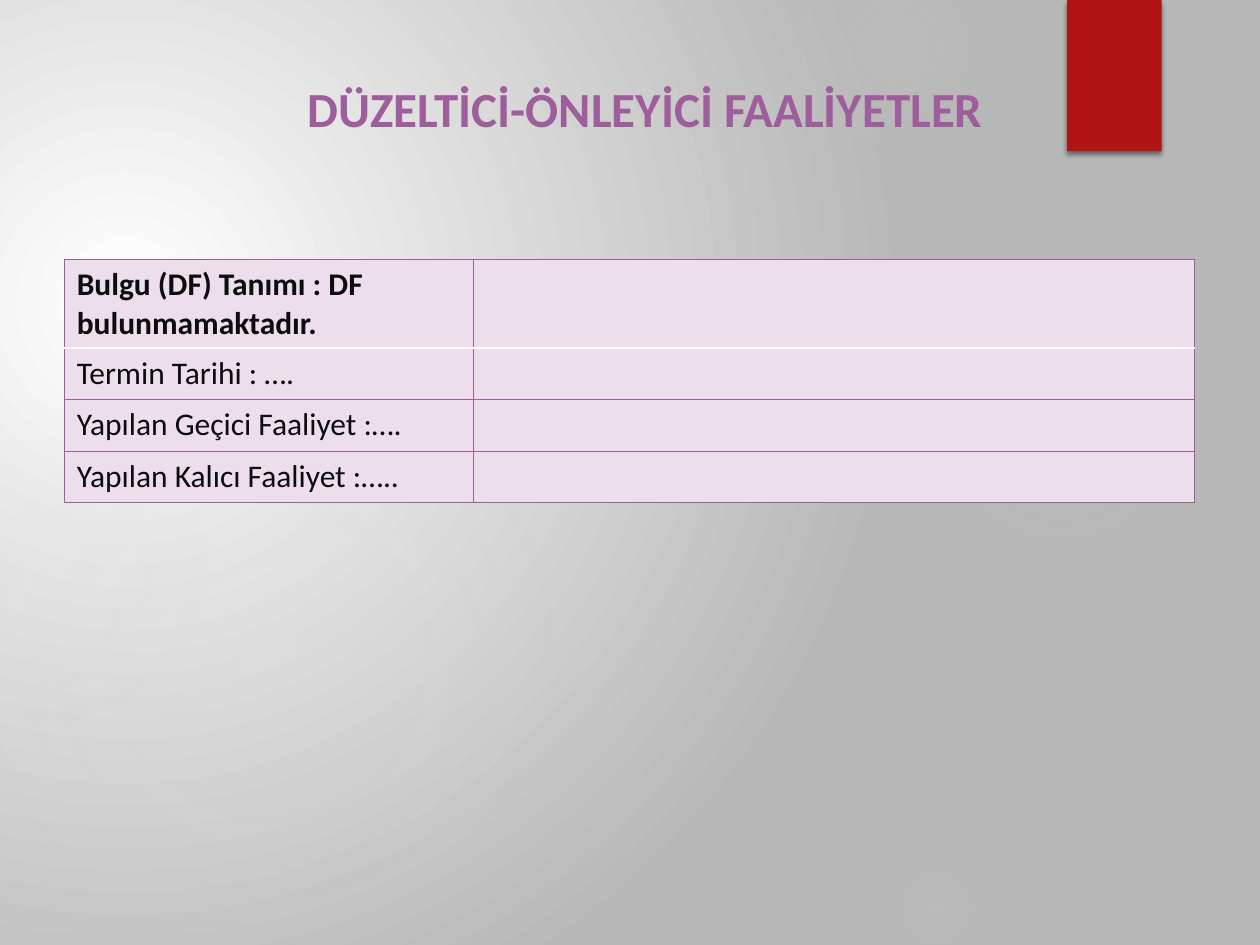
from lxml import etree
from pptx import Presentation
from pptx import util as u
from pptx.dml.color import RGBColor
from pptx.enum import shapes, text
from pptx.oxml import ns

PURPLE, LILAC, INK, RED, WHITE = "9E5E9B", "ECDFEB", "0C0D0D", "B01513", "FFFFFF"


def color(value):
    return RGBColor.from_string(value)


def add_node(parent, tag, **attributes):
    node = etree.SubElement(parent, ns.qn(tag))
    for key, value in attributes.items():
        node.set(key, str(value))
    return node


def add_color(parent, value, alpha=100):
    node = add_node(parent, "a:srgbClr", val=value)
    if alpha < 100:
        add_node(node, "a:alpha", val=alpha * 1000)


def radial_fill(stops, focus):
    """Circular gradient; stops are (position, colour, alpha), all in percent."""
    fill = etree.Element(ns.qn("a:gradFill"), rotWithShape="1")
    stop_list = add_node(fill, "a:gsLst")
    for position, value, alpha in stops:
        add_color(add_node(stop_list, "a:gs", pos=position * 1000), value, alpha)
    circle = add_node(fill, "a:path", path="circle")
    sides = {side: share * 1000 for side, share in zip("ltrb", focus)}
    add_node(circle, "a:fillToRect", **sides)
    return fill


class SlideBuilder:
    font = "Calibri"

    def __init__(self, slide):
        self.slide = slide

    def background(self, stops, focus):
        self.slide.background.fill.solid()
        properties = self.slide.element.find(".//" + ns.qn("p:bgPr"))
        properties.replace(properties[0], radial_fill(stops, focus))

    def shape(self, kind, *box):
        shape = self.slide.shapes.add_shape(kind, *map(u.Inches, box))
        shape.line.fill.background()
        shape.shadow.inherit = False
        return shape

    def glow(self, left, top, size, inner, middle, edge):
        circle = self.shape(shapes.MSO_SHAPE.OVAL, left, top, size, size)
        circle.fill.background()
        properties = circle.element.spPr
        stops = [(0, "D9D9D9", inner), (36, "D9D9D9", middle), (edge, "D9D9D9", 0)]
        properties.replace(properties.find(ns.qn("a:noFill")), radial_fill(stops, [50] * 4))

    def ribbon(self, fill, *box):
        ribbon = self.shape(shapes.MSO_SHAPE.RECTANGLE, *box)
        ribbon.fill.solid()
        ribbon.fill.fore_color.rgb = color(fill)
        effects = ribbon.element.spPr.find(ns.qn("a:effectLst"))
        shadow = add_node(effects, "a:outerShdw", blurRad=u.Pt(3), dist=u.Pt(2),
                          dir=90 * 60000, rotWithShape=0)
        add_color(shadow, "000000", 45)

    def style(self, paragraph, size, ink, bold):
        font = paragraph.font
        font.name, font.size, font.bold = self.font, u.Pt(size), bold
        font.color.rgb = color(ink)

    def title(self, wording, *box):
        frame = self.slide.shapes.add_textbox(*map(u.Inches, box)).text_frame
        frame.word_wrap = True
        frame.vertical_anchor = text.MSO_ANCHOR.MIDDLE
        paragraph = frame.paragraphs[0]
        paragraph.text = wording
        paragraph.alignment = text.PP_ALIGN.CENTER
        paragraph.line_spacing = 0.9
        paragraph.space_after = u.Pt(6)
        self.style(paragraph, 28, PURPLE, True)

    def border(self, cell, side, value, width):
        line = add_node(cell._tc.get_or_add_tcPr(), "a:ln" + side, w=u.Pt(width))
        add_color(add_node(line, "a:solidFill"), value)

    def table(self, labels, left, top, widths, heights):
        box = map(u.Inches, (left, top, sum(widths), sum(heights)))
        table = self.slide.shapes.add_table(len(labels), len(widths), *box).table
        for column, width in zip(table.columns, widths):
            column.width = u.Inches(width)
        for index, (label, height) in enumerate(zip(labels, heights)):
            table.rows[index].height = u.Inches(height)
            table.cell(index, 0).text = label
            for cell in table.rows[index].cells:
                self.style(cell.text_frame.paragraphs[0], 18, INK, index == 0)
                # A white rule parts the header from the rows below
                white_side = {0: "B", 1: "T"}.get(index)
                for side in "LRTB":
                    rule = (WHITE, 1.5) if side == white_side else (PURPLE, 0.75)
                    self.border(cell, side, *rule)
                cell.fill.solid()
                cell.fill.fore_color.rgb = color(LILAC)


def main():
    deck = Presentation()
    deck.slide_width, deck.slide_height = u.Inches(10), u.Inches(7.5)
    builder = SlideBuilder(deck.slides.add_slide(deck.slide_layouts[6]))

    # Backdrop with soft glows
    builder.background([(0, WHITE, 100), (100, "B7B7B7", 100)], (45, 65, 125, 100))
    for glow in [
        (6.89, 1.83, 3.08, 7, 6, 69),
        (6.22, -0.5, 1.75, 14, 7, 73),
        (6.89, 6.67, 1.08, 9, 5, 66),
        (-0.17, 2.92, 4.58, 11, 10, 75),
        (-0.92, 3.17, 2.58, 8, 8, 72),
    ]:
        builder.glow(*glow)
    builder.ribbon(RED, 8.47, 0, 0.75, 1.2)

    # Title
    builder.title("DÜZELTİCİ-ÖNLEYİCİ FAALİYETLER", 1.85, 0.53, 6.54, 0.71)

    # Corrective action form
    labels = [
        "Bulgu (DF) Tanımı : DF bulunmamaktadır.",
        "Termin Tarihi : ….",
        "Yapılan Geçici Faaliyet :….",
        "Yapılan Kalıcı Faaliyet :…..",
    ]
    builder.table(labels, 0.51, 2.06, (3.25, 5.72), (0.7, 0.41, 0.41, 0.41))

    deck.save("out.pptx")


if __name__ == "__main__":
    main()
